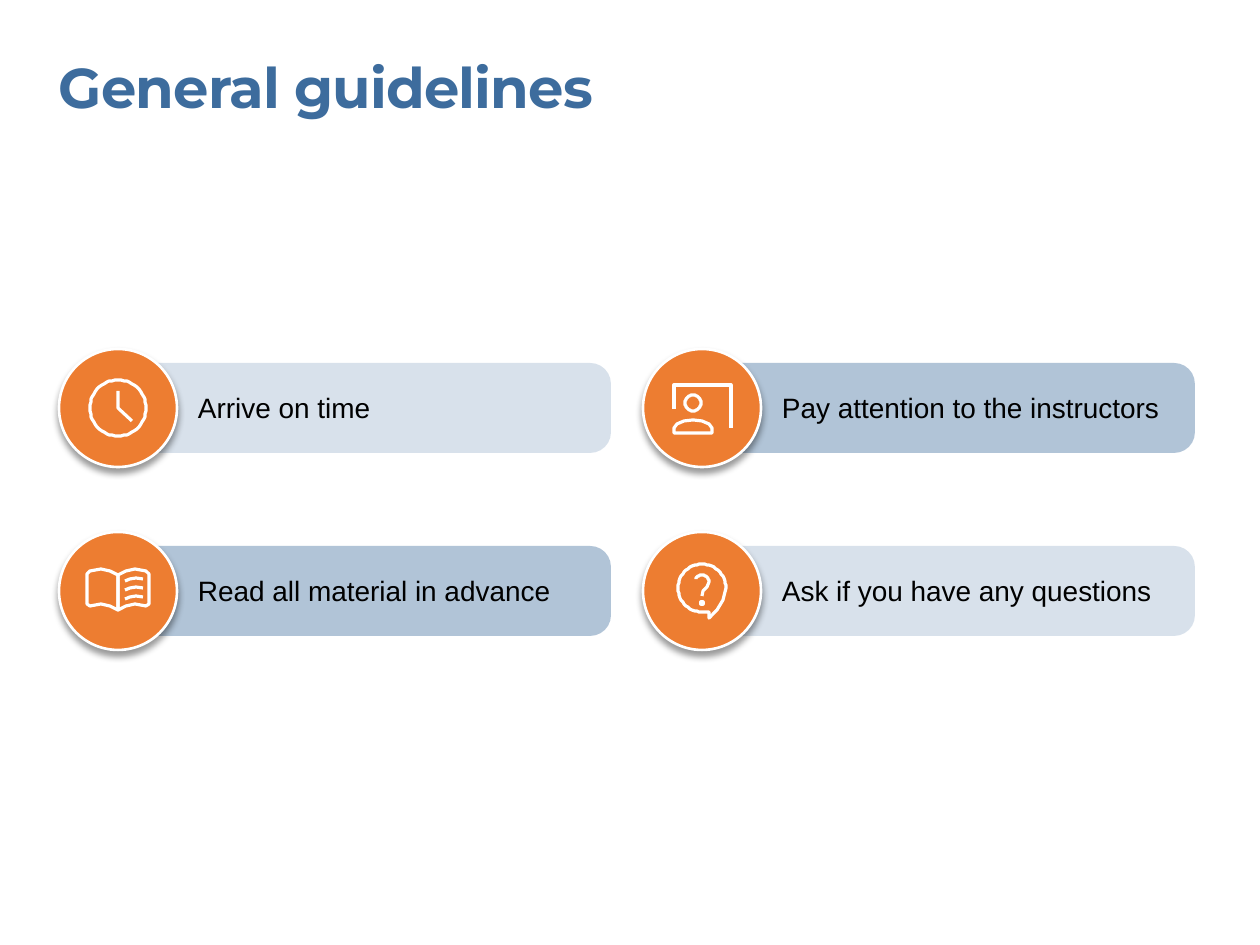
from dataclasses import dataclass
from math import cos, radians, sin

from lxml.etree import SubElement
from pptx import Presentation
from pptx.dml.color import RGBColor as RGB
from pptx.enum.shapes import MSO_SHAPE as SHAPE
from pptx.enum.text import MSO_ANCHOR as ANCHOR, MSO_AUTO_SIZE as AUTO, PP_ALIGN as ALIGN
from pptx.oxml.ns import qn
from pptx.util import Pt

PX = 914400 / 126


@dataclass(frozen=True)
class Theme:
    blue: RGB = RGB(0x3D, 0x6C, 0x9D)
    orange: RGB = RGB(0xED, 0x7D, 0x31)
    white: RGB = RGB(0xFF, 0xFF, 0xFF)
    black: RGB = RGB(0, 0, 0)
    title_font: str = "Montserrat"
    body_font: str = "Arial"
    title_size: Pt = Pt(32)
    body_size: Pt = Pt(16)
    ring: Pt = Pt(1.5)
    stroke: Pt = Pt(1.8)


theme = Theme()


def emu(*lengths):
    return [round(n * PX) for n in lengths]


def arc(cx, cy, radius, start, end):
    """Points along an arc; degrees run clockwise from the right."""
    return [(cx + radius * cos(radians(a)), cy + radius * sin(radians(a)))
            for a in range(start, end + 1, 6)]


# Icon strokes in px from the circle's centre: (points, closed)
left_page = [(-31, -17), (-28, -20), (-17, -22), (-8, -20), (0, -16),
             (0, 19), (-8, 15), (-17, 13), (-28, 15), (-31, 13)]
text_line = [(7, -10), (12, -12), (18, -13), (25, -12)]
shoulders = [(-28, 25), (-28, 20), (-25, 16), (-18, 13), (-9, 12),
             (0, 13), (7, 16), (10, 20), (10, 25)]
bubble_tail = [(21, 9), (15, 19), (7, 27), (7, 21)]

clock = [(arc(0, 0, 28, 0, 360), True),
         ([(0, -17), (0, 0), (14, 13)], False)]
book = [(left_page, True),
        ([(-x, y) for x, y in left_page], True)]
book += [([(x, y + 9 * i) for x, y in text_line], False) for i in range(3)]
presenter = [([(-28, 1), (-28, -23), (29, -23), (29, 20)], False),
             (arc(-9, -5, 8, 0, 360), True),
             (shoulders, True)]
question = [(arc(0, -3, 24, 90, 360) + bubble_tail, True),
            (arc(0, -9, 7, 204, 360) + [(5, -4), (1, 0), (0, 5)], False),
            (arc(0, 12, 1, 0, 360), True)]

# Column, row, bar opacity in percent, text, icon
guidelines = [
    (0, 0, 20, "Arrive on time", clock),
    (0, 1, 40, "Read all material in advance", book),
    (1, 0, 40, "Pay attention to the instructors", presenter),
    (1, 1, 20, "Ask if you have any questions", question),
]

prs = Presentation()
prs.slide_width, prs.slide_height = emu(1260, 945)
slide = prs.slides.add_slide(prs.slide_layouts[5])
shapes = slide.shapes

title = shapes.title
title.left, title.top, title.width, title.height = emu(59, 53, 1077, 68)
title.text_frame.text = "General guidelines"
labels = [(title, theme.title_font, theme.title_size, theme.blue, True)]

for col, row, opacity, text, icon in guidelines:
    cx, cy = 118 + 584 * col, 408 + 183 * row

    bar = shapes.add_shape(SHAPE.ROUNDED_RECTANGLE, *emu(cx, cy - 45, 493, 90))
    bar.adjustments[0] = 0.23
    bar.shadow.inherit = False
    bar.fill.solid()
    bar.fill.fore_color.rgb = theme.blue
    color = bar._element.spPr.find(".//" + qn("a:srgbClr"))
    SubElement(color, qn("a:alpha"), val=str(opacity * 1000))
    bar.line.fill.background()

    circle = shapes.add_shape(SHAPE.OVAL, *emu(cx - 59, cy - 59, 118, 118))
    circle.fill.solid()
    circle.fill.fore_color.rgb = theme.orange
    circle.line.color.rgb = theme.white
    circle.line.width = theme.ring
    circle.shadow.inherit = False
    effects = circle._element.spPr.find(qn("a:effectLst"))
    shadow = SubElement(effects, qn("a:outerShdw"), blurRad=str(Pt(4)), dist=str(Pt(3)),
                        dir="5400000", algn="ctr", rotWithShape="0")
    color = SubElement(shadow, qn("a:srgbClr"), val=str(theme.black))
    SubElement(color, qn("a:alpha"), val="40000")

    builder = None
    for points, closed in icon:
        points = [(cx + x, cy + y) for x, y in points]
        if builder is None:
            builder = shapes.build_freeform(*points[0], scale=PX)
        else:
            builder.move_to(*points[0])
        builder.add_line_segments(points[1:], close=closed)
    drawing = builder.convert_to_shape()
    drawing.shadow.inherit = False
    drawing.fill.background()
    drawing.line.color.rgb = theme.white
    drawing.line.width = theme.stroke

    label = shapes.add_textbox(*emu(cx + 80, cy - 17, 395, 34))
    label.text_frame.text = text
    labels.append((label, theme.body_font, theme.body_size, theme.black, False))

for sp, font, size, color, bold in labels:
    tf = sp.text_frame
    tf.word_wrap = True
    tf.auto_size = AUTO.SHAPE_TO_FIT_TEXT
    tf.vertical_anchor = ANCHOR.TOP
    tf.margin_left = tf.margin_top = tf.margin_right = tf.margin_bottom = 0
    p = tf.paragraphs[0]
    p.alignment = ALIGN.LEFT
    r = p.runs[0]
    r.font.name, r.font.size, r.font.bold = font, size, bold
    r.font.color.rgb = color

title.text_frame.paragraphs[0].runs[0]._r.get_or_add_rPr().set("spc", "-50")

prs.save("out.pptx")
